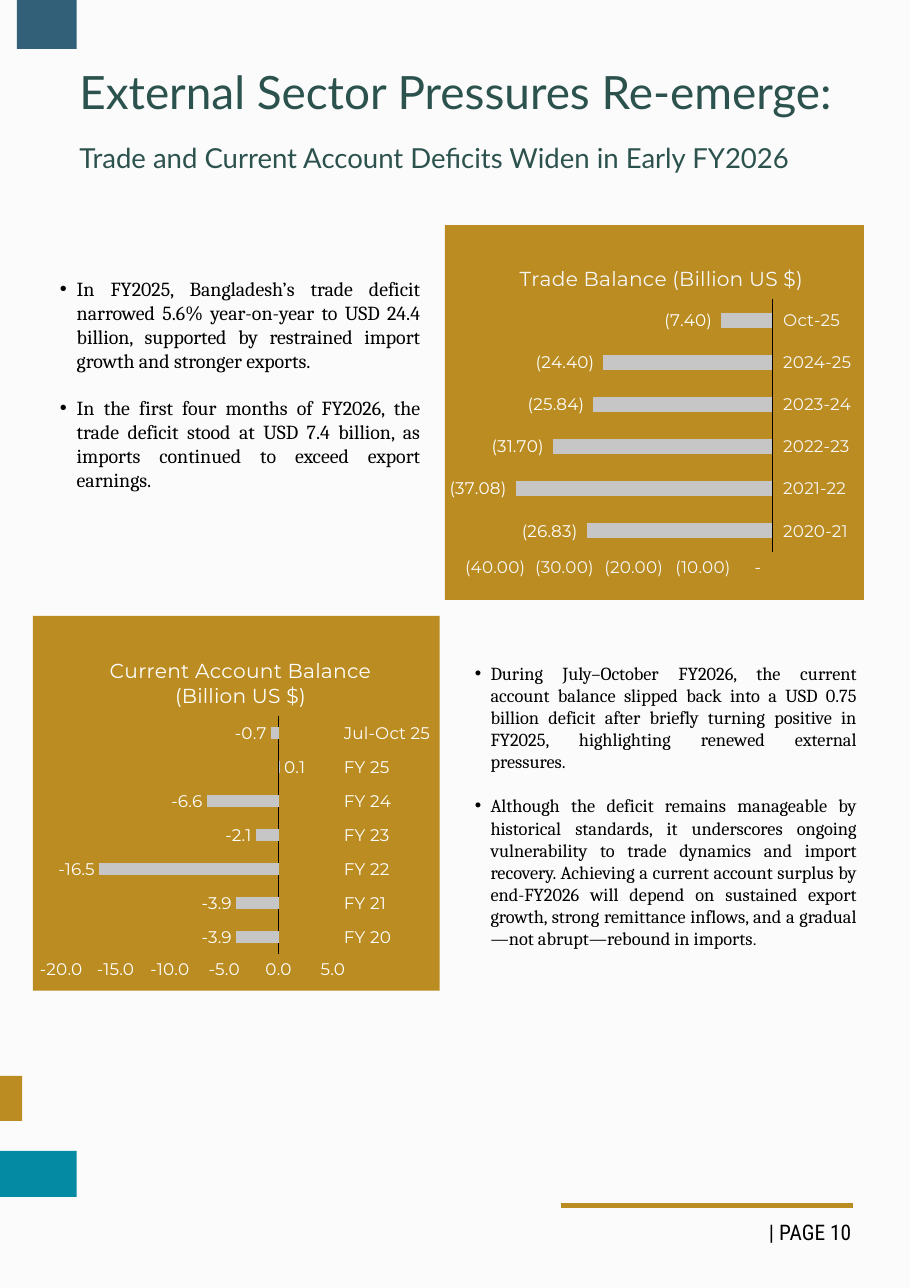
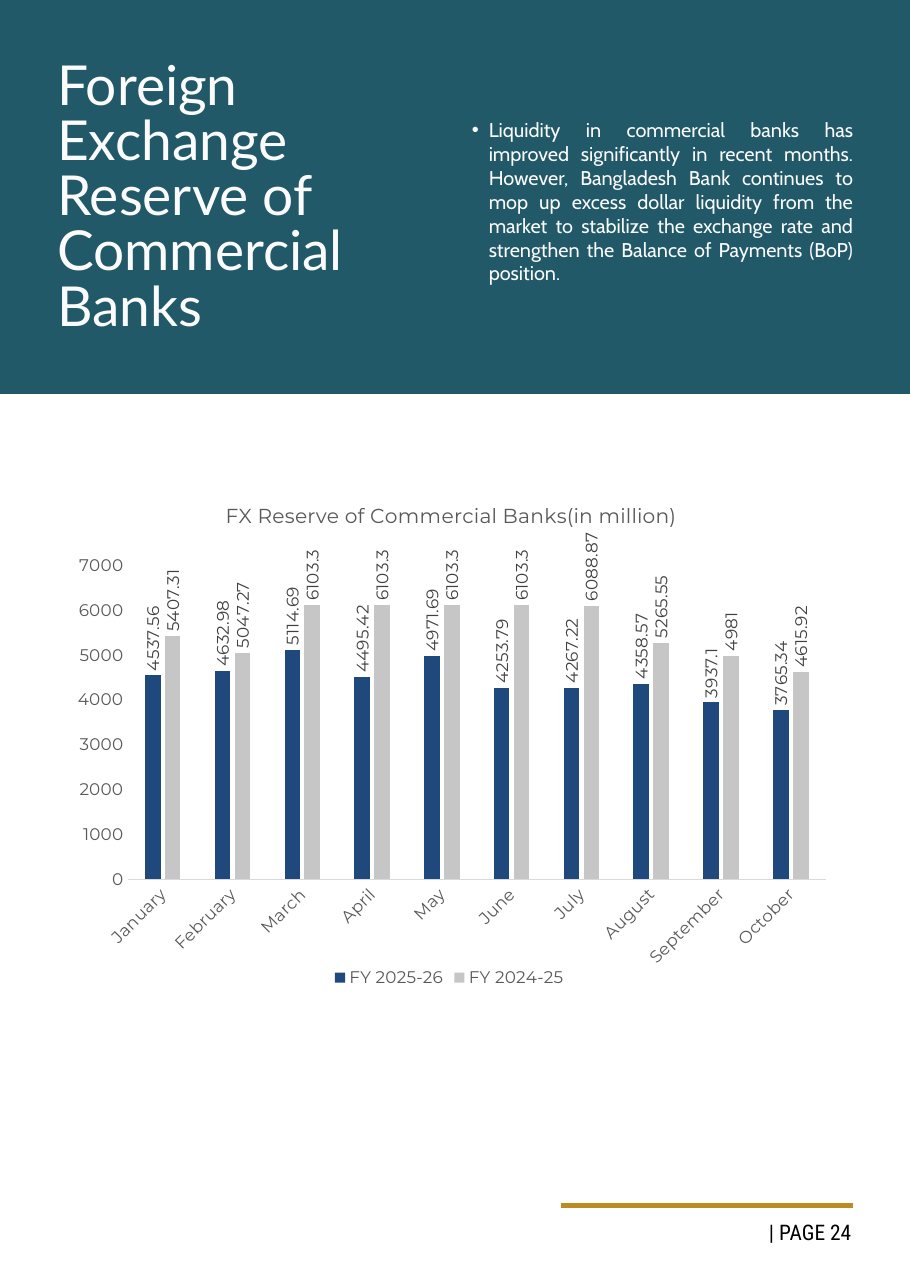
"""Build two report pages on external trade and foreign exchange reserves."""
from lxml.etree import SubElement
from pptx import Presentation
from pptx.chart.data import CategoryChartData
from pptx.dml.color import RGBColor
from pptx.enum.chart import XL_CHART_TYPE as ChartType
from pptx.enum.chart import XL_LABEL_POSITION as LabelPosition
from pptx.enum.chart import XL_LEGEND_POSITION as LegendPosition
from pptx.enum.chart import XL_TICK_LABEL_POSITION as TickLabels
from pptx.enum.chart import XL_TICK_MARK as TickMark
from pptx.enum.shapes import MSO_CONNECTOR as Connector
from pptx.enum.shapes import MSO_SHAPE as Shape
from pptx.enum.text import PP_ALIGN as Align
from pptx.oxml import parse_xml
from pptx.oxml.ns import nsdecls, qn
from pptx.util import Cm, Pt

COLORS = {
    "page": "FBFBFB", "white": "FFFFFF", "black": "000000",
    "gold": "BB8C21", "slate": "316078", "teal": "048AA2",
    "band": "215968", "title": "2C524E", "navy": "1F497D",
    "silver": "C6C6C6", "gray": "595959", "dark": "404040",
    "axis": "D9D9D9", "panel_text": "F7F7F7",
}
FONTS = {"title": "Lato", "serif": "Cambria", "sans": "Cabin",
         "chart": "Montserrat", "footer": "Roboto Condensed"}
ACCOUNTING = r'_ * #,##0.00_)_ ;_ * \(#,##0.00\)_ ;_ * "-"??_)_ ;_ @_ '


def rgb(name):
    return RGBColor.from_string(COLORS[name])


class Report:
    """Holds the page style and the slide being filled."""

    def __init__(self, width, height):
        self.presentation = Presentation()
        self.presentation.slide_width = Cm(width)
        self.presentation.slide_height = Cm(height)
        self.slide = None

    def page(self, number, background):
        layout = self.presentation.slide_layouts[6]
        self.slide = self.presentation.slides.add_slide(layout)
        fill = self.slide.background.fill
        fill.solid()
        fill.fore_color.rgb = rgb(background)
        self.line(12.93, 27.79, 19.66, 27.79)
        frame = self.frame(17.73, 28.19, 2.3, 0.51)
        self.paragraph(frame, [(f"| PAGE {number}", "footer")], 14, "black", 14)

    def line(self, left, top, right, bottom):
        connector = self.slide.shapes.add_connector(
            Connector.STRAIGHT, Cm(left), Cm(top), Cm(right), Cm(bottom))
        connector.line.color.rgb = rgb("gold")
        connector.line.width = Pt(3)
        SubElement(connector.element.spPr, qn("a:effectLst"))

    def block(self, left, top, width, height, color):
        shape = self.slide.shapes.add_shape(
            Shape.RECTANGLE, Cm(left), Cm(top), Cm(width), Cm(height))
        shape.shadow.inherit = False
        shape.fill.solid()
        shape.fill.fore_color.rgb = rgb(color)
        shape.line.fill.background()

    def frame(self, left, top, width, height):
        box = self.slide.shapes.add_textbox(Cm(left), Cm(top), Cm(width), Cm(height))
        frame = box.text_frame
        frame.word_wrap = True
        frame.margin_left = frame.margin_right = 0
        frame.margin_top = frame.margin_bottom = 0
        return frame

    def paragraph(self, frame, runs, size, color, spacing):
        first = frame.paragraphs[0]
        paragraph = frame.add_paragraph() if first.runs else first
        paragraph.line_spacing = Pt(spacing)
        for text, font in runs:
            run = paragraph.add_run()
            run.text = text
            run.font.name = FONTS[font]
            run.font.size = Pt(size)
            run.font.color.rgb = rgb(color)
        return paragraph

    def title(self, left, top, width, height, lines, color):
        frame = self.frame(left, top, width, height)
        for text, size in lines:
            self.paragraph(frame, [(text, "title")], size, color, 36)

    def bullets(self, left, top, width, height, items, size, color, hang):
        frame = self.frame(left, top, width, height)
        spacing = size * 1.2
        for index, runs in enumerate(items):
            paragraph = self.paragraph(frame, runs, size, color, spacing)
            paragraph.alignment = Align.JUSTIFY
            if index:
                paragraph.space_before = Pt(spacing)
            properties = paragraph._p.get_or_add_pPr()
            properties.set("marL", str(Cm(2 * hang)))
            properties.set("indent", str(-Cm(hang)))
            SubElement(properties, qn("a:buFont"), typeface="Arial")
            SubElement(properties, qn("a:buChar"), char="•")

    def font(self, font, size, color):
        font.name = FONTS["chart"]
        font.size = Pt(size)
        font.bold = False
        font.color.rgb = rgb(color)

    def place(self, element, position, inner=False):
        for old in element.findall(qn("c:layout")):
            element.remove(old)
        target = '<c:layoutTarget val="inner"/>' if inner else ""
        modes = "".join(f'<c:{axis}Mode val="edge"/>' for axis in "xy")
        values = "".join(f'<c:{axis} val="{value}"/>'
                         for axis, value in zip("xywh", position))
        layout = parse_xml(f'<c:layout {nsdecls("c")}><c:manualLayout>'
                           f'{target}{modes}{values}</c:manualLayout></c:layout>')
        element.insert(0 if inner else 1, layout)

    def chart(self, kind, box, title, title_at, plot_at, categories, series,
              scale, gap, text, label, axis_line, number_format="General"):
        data = CategoryChartData()
        data.categories = categories
        for name, values, _ in series:
            data.add_series(name, values)
        chart = self.slide.shapes.add_chart(kind, *map(Cm, box), data).chart
        self.font(chart.font, 11, text)
        chart.has_legend = False
        chart.has_title = True
        run = chart.chart_title.text_frame.paragraphs[0].add_run()
        run.text = title
        self.font(run.font, 13.2, text)
        self.place(chart.element.xpath("c:chart/c:title")[0], title_at)
        self.place(chart.element.xpath("c:chart/c:plotArea")[0], plot_at, True)
        plot = chart.plots[0]
        plot.gap_width = gap
        plot.vary_by_categories = False
        for item, (_, _, color) in zip(plot.series, series):
            item.invert_if_negative = False
            item.format.fill.solid()
            item.format.fill.fore_color.rgb = rgb(color)
            labels = item.data_labels
            labels.show_value = True
            labels.position = LabelPosition.OUTSIDE_END
            labels.number_format = number_format
            labels.number_format_is_linked = False
            self.font(labels.font, 11, label)
        category_axis, value_axis = chart.category_axis, chart.value_axis
        for axis in (category_axis, value_axis):
            axis.major_tick_mark = axis.minor_tick_mark = TickMark.NONE
            axis.has_major_gridlines = False
            self.font(axis.tick_labels.font, 11, text)
        category_axis.format.line.color.rgb = rgb(axis_line)
        category_axis.format.line.width = Pt(0.75)
        value_axis.format.line.fill.background()
        value_axis.minimum_scale, value_axis.maximum_scale, value_axis.major_unit = scale
        value_axis.tick_labels.number_format = number_format
        value_axis.tick_labels.number_format_is_linked = False
        return chart

    def balance(self, panel, chart_box, text, **options):
        self.block(*panel, "gold")
        chart = self.chart(ChartType.BAR_CLUSTERED, chart_box, gap=182, text=text,
                           label="white", axis_line="black", **options)
        chart.category_axis.tick_label_position = TickLabels.HIGH

    def rotate(self, chart, parent, degrees):
        for body in chart.element.xpath(f".//c:{parent}/c:txPr/a:bodyPr"):
            body.set("rot", str(degrees * 60000))
            body.set("vert", "horz")


def external_sector(report):
    report.page(10, "page")
    report.block(0.39, 0, 1.38, 1.13, "slate")
    report.block(0, 26.53, 1.77, 1.06, "teal")
    report.block(0, 24.8, 0.51, 1.04, "gold")
    report.title(1.83, 1.47, 18.44, 2.41, [
        ("External Sector Pressures Re-emerge:", 30),
        ("Trade and Current Account Deficits Widen in Early FY2026", 18)], "title")
    report.bullets(0.99, 6.38, 8.69, 5.64, [
        [("In FY2025, Bangladesh’s trade deficit narrowed 5.6% year-on-year to "
          "USD 24.4 billion, supported by restrained import growth and stronger "
          "exports.", "serif")],
        [("In the first four months of FY2026, the trade deficit stood at USD 7.4 "
          "billion, as imports continued to exceed export earnings.", "serif")],
    ], 13, "black", 0.39)
    report.bullets(10.59, 15.27, 9.17, 7.49, [
        [("During July–October FY2026, the current account balance slipped back "
          "into a USD 0.75 billion deficit after briefly turning positive in "
          "FY2025, highlighting renewed external pressures.", "serif")],
        [("Although the deficit remains manageable by historical standards, it "
          "underscores ongoing vulnerability to trade dynamics and import "
          "recovery. Achieving a current account surplus by end-FY2026 will "
          "depend on sustained export growth, strong remittance inflows, and a "
          "gradual—not abrupt—rebound in imports", "serif"), (".", "sans")],
    ], 12, "black", 0.36)
    report.balance(
        (10.26, 5.19, 9.66, 8.64), (10.26, 5.54, 9.55, 7.98), "panel_text",
        title="Trade Balance (Billion US $)",
        title_at=(0.17, 0.06), plot_at=(0.12, 0.17, 0.67, 0.73),
        categories=["2020-21", "2021-22", "2022-23", "2023-24", "2024-25", "Oct-25"],
        series=[("Series 1", [-26.83, -37.08, -31.7, -25.84, -24.4, -7.4], "silver")],
        scale=(-40, 0, 10), number_format=ACCOUNTING)
    current_account = "Current Account Balance (Billion US $)"
    report.balance(
        (0.76, 14.2, 9.38, 8.64), (0.76, 14.63, 9.35, 8.18), "white",
        title=current_account,
        title_at=(0.18, 0.05), plot_at=(0.07, 0.23, 0.67, 0.67),
        categories=[f"FY {year}" for year in range(20, 26)] + ["Jul-Oct 25"],
        series=[(current_account, [-3.9, -3.9, -16.5, -2.1, -6.6, 0.1, -0.7], "silver")],
        scale=(-20, 5, 5), number_format="#,##0.0")


def exchange_reserve(report):
    report.page(24, "white")
    report.block(0, 0, 20.98, 9.08, "band")
    report.title(1.32, 1.42, 8.36, 6.43,
                 [("Foreign Exchange Reserve of Commercial Banks", 36)], "page")
    report.bullets(10.49, 2.72, 9.17, 4.45, [
        [("Liquidity in commercial banks has improved significantly in recent "
          "months. However, Bangladesh Bank continues to mop up excess dollar "
          "liquidity from the market to stabilize the exchange rate and strengthen "
          "the Balance of Payments (BoP) position.", "sans")],
    ], 13, "page", 0.39)
    chart = report.chart(
        ChartType.COLUMN_CLUSTERED, (1.32, 11, 18.08, 11.89),
        title="FX Reserve of Commercial Banks(in million)",
        title_at=(0.21, 0.04), plot_at=(0.09, 0.17, 0.89, 0.61),
        categories=["January", "February", "March", "April", "May", "June",
                    "July", "August", "September", "October"],
        series=[
            ("FY 2025-26", [4537.56, 4632.98, 5114.69, 4495.42, 4971.69, 4253.79,
                            4267.22, 4358.57, 3937.1, 3765.34], "navy"),
            ("FY 2024-25", [5407.31, 5047.27, 6103.3, 6103.3, 6103.3, 6103.3,
                            6088.87, 5265.55, 4981, 4615.92], "silver")],
        scale=(0, 7000, 1000), gap=219, text="gray", label="dark", axis_line="axis")
    chart.plots[0].overlap = -27
    report.rotate(chart, "dLbls", -90)
    report.rotate(chart, "catAx", -45)
    chart.has_legend = True
    chart.legend.position = LegendPosition.BOTTOM
    chart.legend.include_in_layout = False
    report.font(chart.legend.font, 11, "gray")


def main():
    report = Report(20.98, 29.69)
    external_sector(report)
    exchange_reserve(report)
    report.presentation.save("out.pptx")


if __name__ == "__main__":
    main()
